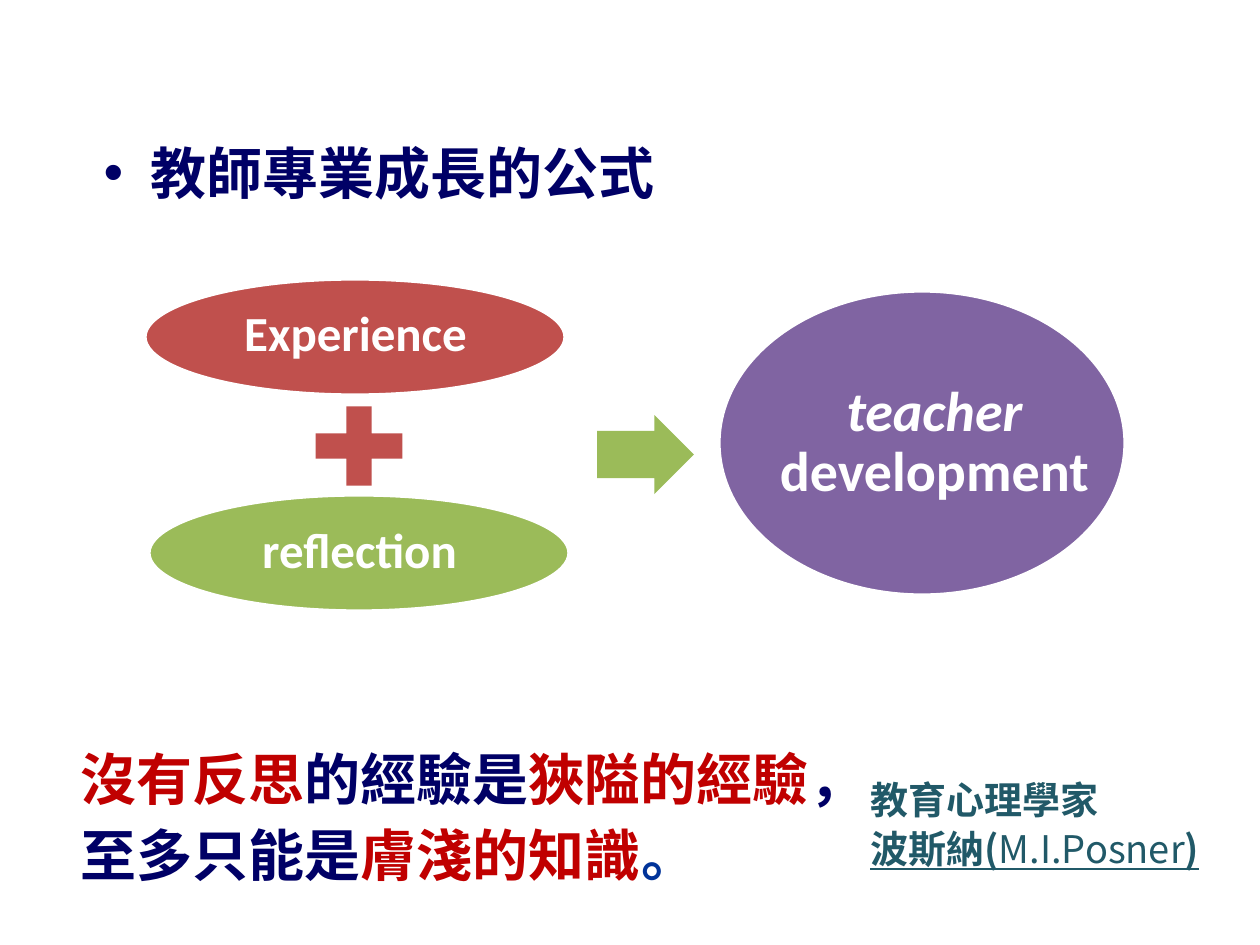
import pptx
import pptx.util
import pptx.dml.color
import pptx.enum.shapes
import pptx.enum.text
import pptx.oxml.ns
import lxml.etree

SHAPE = pptx.enum.shapes.MSO_SHAPE
ALIGN = pptx.enum.text.PP_ALIGN
ANCHOR = pptx.enum.text.MSO_ANCHOR
QN = pptx.oxml.ns.qn
CJK = "Noto Sans CJK SC"
NAVY, CRIMSON, BLUE, TEAL = "000066", "C00000", "003399", "215968"
RED, GREEN, PURPLE, WHITE = "C0504D", "9BBB59", "8064A2", "FFFFFF"


def px(count):
    return pptx.util.Emu(round(count * 914400 / 126))


def colour(value):
    return pptx.dml.color.RGBColor.from_string(value)


def add_span(para, text, tint, formats):
    span = para.add_run()
    span.text = text
    for name, value in formats.items():
        setattr(span.font, name, value)
    span.font.color.rgb = colour(tint)
    east = lxml.etree.SubElement(span.font._element, QN("a:ea"))
    east.set("typeface", formats["name"])


def add_text_box(page, box, inset=None, anchor=ANCHOR.TOP):
    frame = page.shapes.add_textbox(*map(px, box)).text_frame
    settings = {"word_wrap": True, "vertical_anchor": anchor}
    if inset is not None:
        for side in ("left", "top", "right", "bottom"):
            settings["margin_" + side] = px(inset)
    for name, value in settings.items():
        setattr(frame, name, value)
    return frame


def add_preset(page, kind, box, fill, outlined=False):
    shape = page.shapes.add_shape(kind, *map(px, box))
    shape.shadow.inherit = False
    shape.fill.solid()
    shape.fill.fore_color.rgb = colour(fill)
    if outlined:
        shape.line.color.rgb = colour(WHITE)
        shape.line.width = pptx.util.Pt(3)
    else:
        shape.line.fill.background()
    return shape


def add_label(page, box, spans, size, inset):
    para = add_text_box(page, box, inset, ANCHOR.MIDDLE).paragraphs[0]
    para.alignment = ALIGN.CENTER
    para.line_spacing = 0.9
    for text, italic in spans:
        add_span(para, text, WHITE, {
            "name": "Calibri", "size": pptx.util.Pt(size), "bold": True, "italic": italic})


def add_heading(page, box):
    page.shapes.title.element.getparent().remove(page.shapes.title.element)
    body = page.placeholders[1]
    for name, value in zip(("left", "top", "width", "height"), box):
        setattr(body, name, px(value))
    body.text_frame.auto_size = pptx.enum.text.MSO_AUTO_SIZE.NONE
    para = body.text_frame.paragraphs[0]
    properties = para._p.get_or_add_pPr()
    properties.set("marL", str(px(47)))
    properties.set("indent", str(-px(47)))
    bullet = lxml.etree.SubElement(properties, QN("a:buChar"))
    bullet.set("char", "•")
    para.space_before = pptx.util.Pt(0)
    add_span(para, "教師專業成長的公式", NAVY,
             {"name": CJK, "size": pptx.util.Pt(32), "bold": True})


def add_formula(page, box):
    left, top, width, height = box

    def place(x, y, w, h):
        return left + x, top + y, w, h

    inputs = [("Experience", RED, (0, 0), (62, 3, 299, 110)),
              ("reflection", GREEN, (4, 216), (66, 233, 299, 83))]
    for text, fill, corner, label in inputs:
        add_preset(page, SHAPE.OVAL, place(*corner, 422, 118), fill, True)
        add_label(page, place(*label), [(text, False)], 28, 3)
    add_preset(page, SHAPE.MATH_PLUS, place(156, 114, 118, 108), RED)
    arrow = add_preset(page, SHAPE.RIGHT_ARROW, place(453, 137, 97, 79), GREEN)
    arrow.adjustments[0] = 0.6
    add_preset(page, SHAPE.OVAL, place(width - 408, 12, 408, 306), PURPLE, True)
    add_label(page, place(599, 57, 383, 217),
              [("teacher", True), (" development", False)], 32, 5)


def add_quote(page, box):
    para = add_text_box(page, box).paragraphs[0]
    para.line_spacing = pptx.util.Pt(44)
    lines = [
        [("沒有反思", CRIMSON), ("的經驗是", NAVY), ("狹隘的經驗", CRIMSON), ("，", NAVY)],
        [("至多只能是", NAVY), ("膚淺的知識", CRIMSON), ("。", BLUE)],
    ]
    for index, line in enumerate(lines):
        if index:
            para.add_line_break()
        for text, tint in line:
            add_span(para, text, tint,
                     {"name": CJK, "size": pptx.util.Pt(32), "bold": True})


def add_source(page, box):
    frame = add_text_box(page, box)
    lines = [
        [("教育心理學家", True, False)],
        [("波斯納(", True, True), ("M.I.Posner", False, True), (")", True, True)],
    ]
    for index, line in enumerate(lines):
        para = frame.add_paragraph() if index else frame.paragraphs[0]
        para.line_spacing = pptx.util.Pt(28)
        for text, bold, underline in line:
            add_span(para, text, TEAL, {
                "name": CJK, "size": pptx.util.Pt(21.7), "bold": bold, "underline": underline})


def main():
    deck = pptx.Presentation()
    deck.slide_width, deck.slide_height = px(1260), px(945)
    page = deck.slides.add_slide(deck.slide_layouts[1])
    add_heading(page, (91, 132, 633, 101))
    add_formula(page, (144, 278, 982, 334))
    add_quote(page, (68, 728, 881, 184))
    add_source(page, (858, 767, 360, 139))
    deck.save("out.pptx")


if __name__ == "__main__":
    main()
